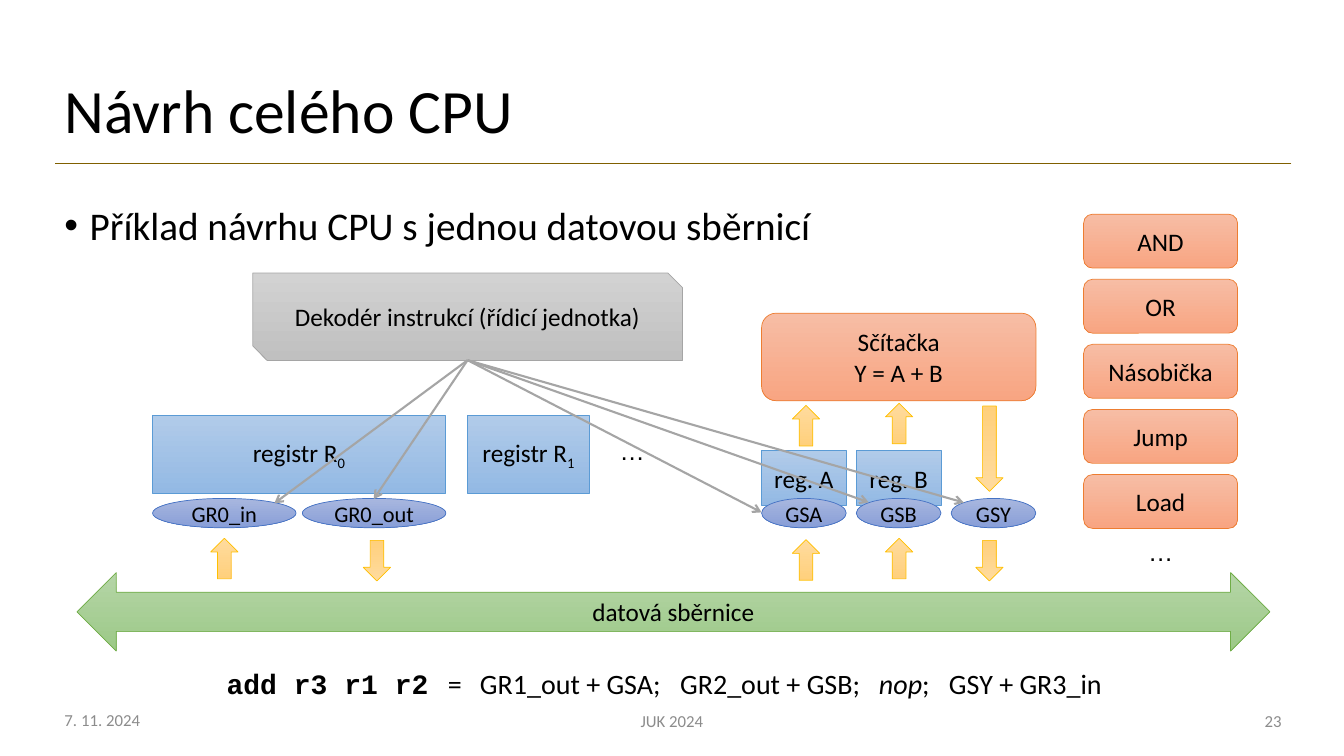
from lxml import etree
from pptx import Presentation
from pptx.dml.color import RGBColor
from pptx.enum import shapes, text
from pptx.oxml import ns
from pptx.util import Pt

COLORS = {"black": "000000", "footer": "8C8C8C", "rule": "806000", "signal": "A5A5A5"}
# style: gradient top, gradient bottom, outline
STYLES = {
    "bus": ("B5D5A7", "9CC987", "70AD47"),
    "gate": ("A8B7DF", "889ED7", "4472C4"),
    "register": ("B1CBE9", "93B9E4", "5B9BD5"),
    "unit": ("F7BDA5", "F8A582", "ED7D31"),
    "flow": ("FFDB9E", "FFD07C", "FFC000"),
    "decoder": ("D2D2D2", "C0C0C0", "A5A5A5"),
}
KIND = shapes.MSO_SHAPE
ALIGN = text.PP_ALIGN
MIDDLE = text.MSO_ANCHOR.MIDDLE
TOP = text.MSO_ANCHOR.TOP

TITLE = "Návrh celého CPU"
BULLET = "Příklad návrhu CPU s jednou datovou sběrnicí"
# text, left, top, width, alignment
FOOTERS = [
    ("7. 11. 2024", 39, 499.7, 216, ALIGN.LEFT),
    ("JUK 2024", 318, 500.4, 324, ALIGN.CENTER),
    ("23", 706.5, 500.4, 216, ALIGN.RIGHT),
]
OPERATIONS = ["AND", "OR", "Násobička", "Jump", "Load"]
OPERATION_LEFT, OPERATION_TOP, OPERATION_STEP = 774, 153, 46.5

# style, preset, (left, top, width, height), label, subscript
BLOCKS = [
    ("bus", KIND.LEFT_RIGHT_ARROW, (55, 409, 852, 56), "datová sběrnice", ""),
    ("register", KIND.RECTANGLE, (109, 296.5, 209, 56), "registr R", "0"),
    ("register", KIND.RECTANGLE, (334, 296.5, 87, 56), "registr R", "1"),
    ("unit", KIND.ROUNDED_RECTANGLE, (544, 223.7, 196, 62.5), "Sčítačka\nY = A + B", ""),
    ("decoder", KIND.SNIP_2_DIAG_RECTANGLE, (180.5, 195, 307, 62.5),
     "Dekodér instrukcí (řídicí jednotka)", ""),
]
ADDER_LEFT, ADDER_STEP, ADDER_WIDTH = 544, 67.7, 60.5
ADDER_REGISTERS = ["reg. A", "reg. B"]
ADDER_GATES = ["GSA", "GSB", "GSY"]
REGISTER_GATES = [("GR0_in", 109), ("GR0_out", 216)]
GATE_TOP, GATE_HEIGHT = 356, 21

# left, top, height, rotation
FLOWS = [
    (566, 289.5, 29, 0), (632.5, 288, 29, 0), (697, 290, 61, 180),
    (566, 385.5, 29, 0), (632.5, 384.5, 29, 0), (697, 386, 29, 180),
    (150.5, 384.5, 29, 0), (259.5, 386, 29, 180),
]
SIGNAL_START = (334, 257.3)
SIGNAL_ENDS = [(196, 359.5), (267, 356.5), (544, 366), (620.5, 358.8), (688.5, 359)]
ELLIPSES = [(435.5, 307.5), (813, 379.5)]

SANS = {"name": "Calibri", "size": Pt(20)}
FORMULA = [
    ("add r3 r1 r2", {"name": "Courier New", "size": Pt(20), "bold": True}),
    ("\t=\tGR1_out + GSA;\tGR2_out + GSB;\t", SANS),
    ("nop", {**SANS, "italic": True}),
    (";\tGSY + GR3_in", SANS),
]
FORMULA_TABS = [158, 181, 324, 466, 516]


def set_all(target, **values):
    for name, value in values.items():
        setattr(target, name, value)


def add_span(para, words, color="black", **font):
    span = para.add_run()
    span.text = words
    set_all(span.font, **{"name": "Calibri", **font})
    span.font.color.rgb = RGBColor.from_string(COLORS[color])
    return span


def add_text_box(page, left, top, width, height, anchor=TOP):
    box = page.shapes.add_textbox(Pt(left), Pt(top), Pt(width), Pt(height))
    set_all(box.text_frame, word_wrap=True, vertical_anchor=anchor)
    return box.text_frame.paragraphs[0]


def add_block(page, style, preset, area, label="", subscript="", size=18):
    block = page.shapes.add_shape(preset, *map(Pt, area))
    block.shadow.inherit = False
    first, last, outline = STYLES[style]
    block.fill.gradient()
    block.fill.gradient_angle = 270
    for stop, color in zip(block.fill.gradient_stops, (first, last)):
        stop.color.rgb = RGBColor.from_string(color)
    block.fill.gradient_stops[1].position = 1
    block.line.color.rgb = RGBColor.from_string(outline)
    block.line.width = Pt(0.5)
    frame = block.text_frame
    set_all(frame, word_wrap=False, vertical_anchor=MIDDLE, margin_left=0,
            margin_right=0, margin_top=0, margin_bottom=0)
    for index, words in enumerate(label.split("\n") if label else []):
        para = frame.add_paragraph() if index else frame.paragraphs[0]
        para.alignment = ALIGN.CENTER
        add_span(para, words, size=Pt(size))
        if subscript:
            low = add_span(para, subscript, size=Pt(size))
            low.font._element.set("baseline", "-25000")
    return block


def add_line(page, start, end, color, width, arrow=False):
    line = page.shapes.add_connector(
        shapes.MSO_CONNECTOR.STRAIGHT, *map(Pt, (*start, *end)))
    line.line.color.rgb = RGBColor.from_string(COLORS[color])
    line.line.width = Pt(width)
    if arrow:
        etree.SubElement(line.line._get_or_add_ln(), ns.qn("a:tailEnd"), type="arrow")
    etree.SubElement(line._element.spPr, ns.qn("a:effectLst"))


def add_heading(page):
    add_line(page, (922.5, 116.6), (39, 116.6), "rule", 1)
    title = page.shapes.title
    set_all(title, left=Pt(39), top=Pt(28.8), width=Pt(798), height=Pt(104.4))
    set_all(title.text_frame, vertical_anchor=MIDDLE, word_wrap=True)
    para = title.text_frame.paragraphs[0]
    set_all(para, alignment=ALIGN.LEFT, line_spacing=0.9)
    add_span(para, TITLE, size=Pt(44))

    para = add_text_box(page, 39, 144, 883.5, 342.7)
    para.line_spacing = 0.9
    props = para._p.get_or_add_pPr()
    props.set("marL", str(Pt(18)))
    props.set("indent", str(Pt(-18)))
    etree.SubElement(props, ns.qn("a:buFont"), typeface="Arial")
    etree.SubElement(props, ns.qn("a:buChar"), char="•")
    add_span(para, BULLET, size=Pt(28))


def add_formula(page):
    para = add_text_box(page, 154.8, 472.3, 645, 31.7)
    tabs = etree.SubElement(para._p.get_or_add_pPr(), ns.qn("a:tabLst"))
    for position in FORMULA_TABS:
        etree.SubElement(tabs, ns.qn("a:tab"), pos=str(Pt(position)), algn="l")
    for words, font in FORMULA:
        add_span(para, words, **font)


def main():
    deck = Presentation()
    set_all(deck, slide_width=Pt(960), slide_height=Pt(540))
    page = deck.slides.add_slide(deck.slide_layouts[5])
    add_heading(page)

    for words, left, top, width, alignment in FOOTERS:
        para = add_text_box(page, left, top, width, 28.8, MIDDLE)
        para.alignment = alignment
        add_span(para, words, "footer", size=Pt(12))

    for block in BLOCKS:
        add_block(page, *block)
    for index, name in enumerate(OPERATIONS):
        top = OPERATION_TOP + index * OPERATION_STEP
        add_block(page, "unit", KIND.ROUNDED_RECTANGLE,
                  (OPERATION_LEFT, top, 110, 38.5), name)

    adder_columns = [ADDER_LEFT + index * ADDER_STEP for index in range(3)]
    for name, left in zip(ADDER_REGISTERS, adder_columns):
        add_block(page, "register", KIND.RECTANGLE, (left, 322, ADDER_WIDTH, 39), name)
    gates = [(name, left, 102.5) for name, left in REGISTER_GATES]
    gates += [(name, left, ADDER_WIDTH) for name, left in zip(ADDER_GATES, adder_columns)]
    for name, left, width in gates:
        add_block(page, "gate", KIND.OVAL, (left, GATE_TOP, width, GATE_HEIGHT),
                  name, size=16)

    for left, top, height, rotation in FLOWS:
        flow = add_block(page, "flow", KIND.UP_ARROW, (left, top, 19.5, height))
        flow.rotation = rotation
    for left, top in ELLIPSES:
        para = add_text_box(page, left, top, 32.5, 29)
        add_span(para, "…", name="Arial", size=Pt(18))
    for end in SIGNAL_ENDS:
        add_line(page, SIGNAL_START, end, "signal", 1.5, arrow=True)
    add_formula(page)
    deck.save("out.pptx")


if __name__ == "__main__":
    main()
